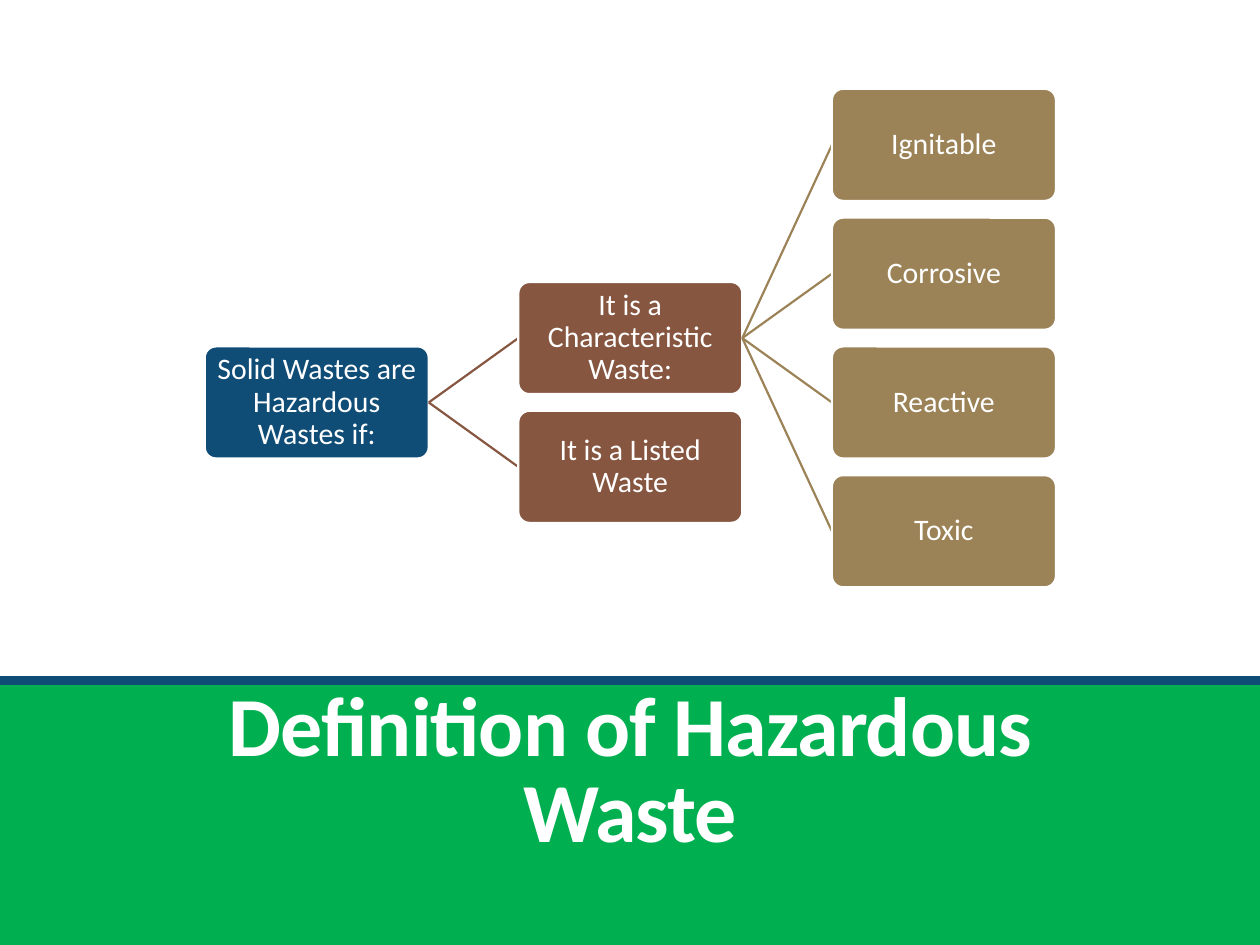
from dataclasses import dataclass

from lxml import etree
from pptx import Presentation
from pptx import util as u
from pptx.dml.color import RGBColor
from pptx.enum import shapes, text
from pptx.oxml.ns import qn

COLORS = {
    "white": "FFFFFF",
    "green": "00B050",
    "blue": "0F4C76",
    "brown": "865640",
    "tan": "9B8357",
}
LEVEL_COLORS = ["blue", "brown", "tan"]
FONT = "Calibri"

# Tree grid, in points
TREE_LEFT, TREE_TOP = 117, 50.8
BOX_WIDTH, BOX_HEIGHT = 128, 64
COLUMN_STEP, ROW_STEP = 179.2, 73.6
LINE_WIDTH = 1.25


@dataclass(frozen=True)
class Node:
    label: str
    row: float
    children: tuple["Node", ...] = ()


@dataclass(frozen=True)
class Band:
    top: float
    height: float
    color: str


BANDS = [Band(390, 150, "green"), Band(386.4, 5, "blue")]

TREE = Node("Solid Wastes are Hazardous Wastes if:", 2, (
    Node("It is a Characteristic Waste:", 1.5, (
        Node("Ignitable", 0),
        Node("Corrosive", 1),
        Node("Reactive", 2),
        Node("Toxic", 3),
    )),
    Node("It is a Listed Waste", 2.5),
))


def rgb(name: str) -> RGBColor:
    return RGBColor.from_string(COLORS[name])


def write_text(shape, words: str, size: float, spacing: float, bold: bool = False):
    """Put one centred white paragraph into a shape and return its run."""
    frame = shape.text_frame
    frame.word_wrap = True
    frame.text = words
    paragraph = frame.paragraphs[0]
    paragraph.alignment = text.PP_ALIGN.CENTER
    paragraph.line_spacing = spacing
    run = paragraph.runs[0]
    run.font.name = FONT
    run.font.size = u.Pt(size)
    run.font.bold = bold
    run.font.color.rgb = rgb("white")
    return run


def draw_band(slide, band: Band) -> None:
    shape = slide.shapes.add_shape(
        shapes.MSO_SHAPE.RECTANGLE, 0, u.Pt(band.top), u.Pt(720), u.Pt(band.height))
    shape.shadow.inherit = False
    shape.fill.solid()
    shape.fill.fore_color.rgb = rgb(band.color)
    shape.line.fill.background()


def draw_title(slide, words: str) -> None:
    shape = slide.shapes.add_textbox(u.Pt(63), u.Pt(413.3), u.Pt(594), u.Pt(81.4))
    run = write_text(shape, words, 48, 0.85, bold=True)
    shape.text_frame.vertical_anchor = text.MSO_ANCHOR.BOTTOM
    run.font._element.set("spc", "-50")


def draw_box(slide, node: Node, level: int):
    shape = slide.shapes.add_shape(
        shapes.MSO_SHAPE.ROUNDED_RECTANGLE,
        u.Pt(TREE_LEFT + level * COLUMN_STEP), u.Pt(TREE_TOP + node.row * ROW_STEP),
        u.Pt(BOX_WIDTH), u.Pt(BOX_HEIGHT))
    shape.adjustments[0] = 0.1
    shape.shadow.inherit = False
    shape.fill.solid()
    shape.fill.fore_color.rgb = rgb(LEVEL_COLORS[level])
    shape.line.color.rgb = rgb("white")
    shape.line.width = u.Pt(LINE_WIDTH)
    write_text(shape, node.label, 17, 0.9)
    frame = shape.text_frame
    frame.vertical_anchor = text.MSO_ANCHOR.MIDDLE
    frame.margin_left = frame.margin_right = u.Pt(0.75)
    frame.margin_top = frame.margin_bottom = u.Pt(0.75)
    return shape


def draw_branch(slide, parent, color: str):
    """Start a connector at the right side of the parent box."""
    connector = slide.shapes.add_connector(shapes.MSO_CONNECTOR.STRAIGHT, 0, 0, 0, 0)
    connector.begin_connect(parent, 3)
    connector.line.color.rgb = rgb(color)
    connector.line.width = u.Pt(LINE_WIDTH)
    etree.SubElement(connector._element.spPr, qn("a:effectLst"))
    return connector


def draw_tree(slide, node: Node, level: int = 0):
    """Draw a box, then each branch beneath the child box it leads to."""
    box = draw_box(slide, node, level)
    for child in node.children:
        connector = draw_branch(slide, box, LEVEL_COLORS[level + 1])
        connector.end_connect(draw_tree(slide, child, level + 1), 1)
    return box


def main() -> None:
    presentation = Presentation()
    presentation.slide_width, presentation.slide_height = u.Pt(720), u.Pt(540)
    slide = presentation.slides.add_slide(presentation.slide_layouts[6])

    # Title area
    for band in BANDS:
        draw_band(slide, band)
    draw_title(slide, "Definition of Hazardous Waste")

    # Classification tree
    draw_tree(slide, TREE)

    presentation.save("out.pptx")


if __name__ == "__main__":
    main()
